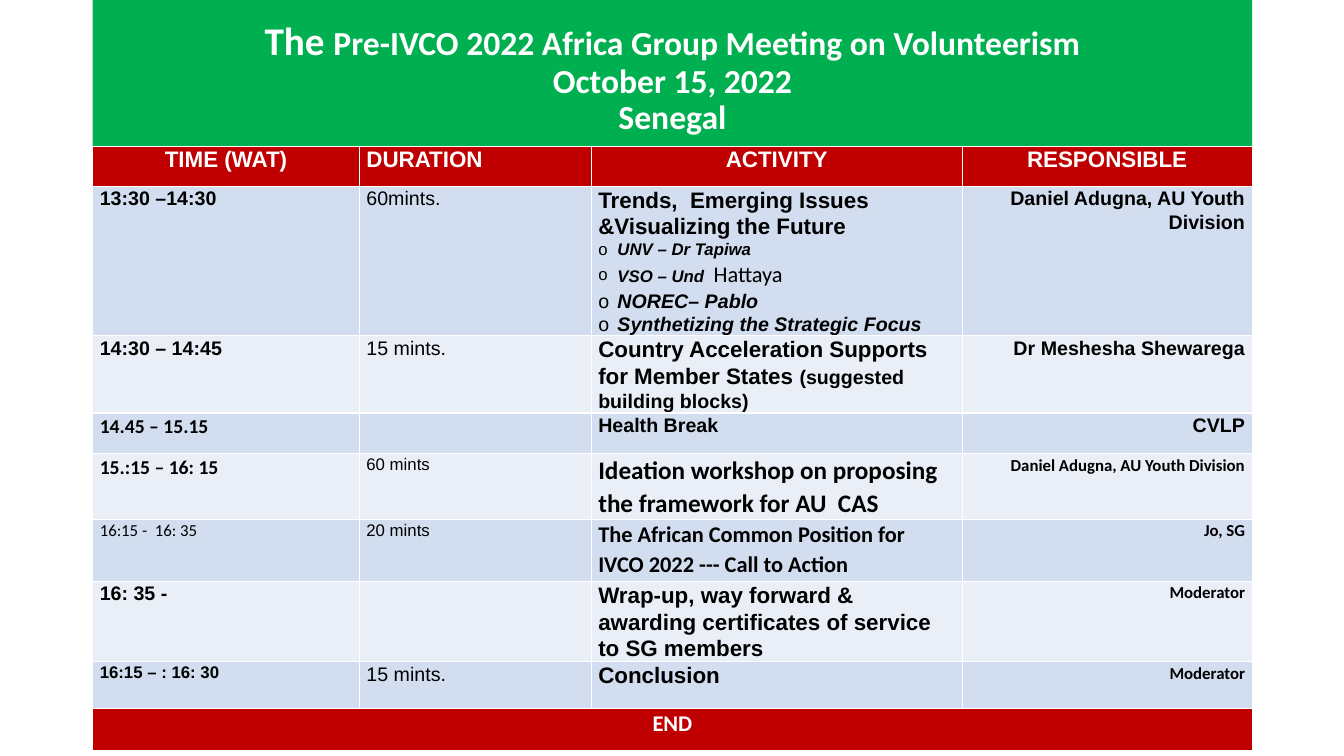
from dataclasses import dataclass

from lxml import etree
from pptx import Presentation, util as u
from pptx.dml.color import RGBColor
from pptx.enum import text
from pptx.oxml.ns import qn

LEFT, CENTER, RIGHT = text.PP_ALIGN.LEFT, text.PP_ALIGN.CENTER, text.PP_ALIGN.RIGHT


@dataclass(frozen=True)
class Theme:
    white: str = "FFFFFF"
    black: str = "000000"
    green: str = "00B050"
    red: str = "C00000"
    bands: tuple = ("D2DEEF", "EAEFF7")
    sans: str = "Arial"
    humanist: str = "Calibri"
    small: int = 12
    body: int = 14
    large: int = 16
    feature: int = 18
    title: int = 24
    lead: int = 28


THEME = Theme()


@dataclass(frozen=True)
class Span:
    words: str
    size: int = THEME.body
    face: str = THEME.sans
    bold: bool = True
    italic: bool = False
    color: str = THEME.black

    def style(self, font):
        font.name, font.size = self.face, u.Pt(self.size)
        font.bold, font.italic = self.bold, self.italic
        font.color.rgb = RGBColor.from_string(self.color)


@dataclass(frozen=True)
class Para:
    spans: tuple
    bullet: bool = False


def line(words, size=THEME.body, face=THEME.sans, **look):
    return Para((Span(words, size, face, **look),))


def item(*spans):
    return Para(spans, bullet=True)


class AgendaPage:
    """Places elements by percentages of the slide's size."""

    def __init__(self, deck, theme):
        self.deck, self.theme = deck, theme
        self.page = deck.slides.add_slide(deck.slide_layouts[5])

    def across(self, share):
        return int(self.deck.slide_width * share / 100)

    def down(self, share):
        return int(self.deck.slide_height * share / 100)

    def area(self, left, top, width, height):
        return self.across(left), self.down(top), self.across(width), self.down(height)

    def title(self, place, lines):
        box = self.page.shapes.title
        box.left, box.top, box.width, box.height = self.area(*place)
        box.fill.solid()
        box.fill.fore_color.rgb = RGBColor.from_string(self.theme.green)
        frame = box.text_frame
        frame.word_wrap, frame.auto_size = True, text.MSO_AUTO_SIZE.NONE
        frame.vertical_anchor = text.MSO_ANCHOR.MIDDLE
        frame.margin_top, frame.margin_bottom = self.down(1.6), 0
        para = frame.paragraphs[0]
        para.alignment, para.line_spacing = CENTER, 0.9
        for number, spans in enumerate(lines):
            if number:
                para.add_line_break()
            self.add_spans(para, spans)

    def add_spans(self, para, spans):
        for span in spans:
            run = para.add_run()
            run.text = span.words
            span.style(run.font)

    def bullet(self, para):
        props = para._p.get_or_add_pPr()
        indent = u.Inches(0.19)
        props.set("marL", str(indent))
        props.set("indent", str(-indent))
        etree.SubElement(props, qn("a:buFont")).set("typeface", self.theme.sans)
        etree.SubElement(props, qn("a:buChar")).set("char", "o")

    def cell(self, cell, paras, fill, alignment):
        cell.fill.solid()
        cell.fill.fore_color.rgb = RGBColor.from_string(fill)
        cell.margin_left = cell.margin_right = u.Inches(0.07)
        cell.margin_top = cell.margin_bottom = 0
        frame = cell.text_frame
        for number, content in enumerate(paras):
            para = frame.add_paragraph() if number else frame.paragraphs[0]
            para.alignment, para.line_spacing = alignment, 1.07
            if content.bullet:
                self.bullet(para)
            if len(content.spans) == 1:
                para.add_run().text = content.spans[0].words
                content.spans[0].style(para.font)
            else:
                self.add_spans(para, content.spans)

    def agenda(self, place, columns, rows, header, sessions, closing):
        """Columns are shares of the table's width, rows shares of the slide's height."""
        table = self.page.shapes.add_table(
            len(rows), len(columns), *self.area(*place)).table
        for column, share in zip(table.columns, columns):
            column.width = self.across(place[2] * share / 100)
        for row, share in zip(table.rows, rows):
            row.height = self.down(share)
        for number, words in enumerate(header):
            self.cell(table.cell(0, number),
                      [line(words, self.theme.large, color=self.theme.white)],
                      self.theme.red, LEFT if words == "DURATION" else CENTER)
        for number, session in enumerate(sessions):
            fill = self.theme.bands[number % 2]
            for column, content in enumerate(session):
                self.cell(table.cell(number + 1, column), content, fill,
                          RIGHT if column == len(columns) - 1 else LEFT)
        last = len(rows) - 1
        table.cell(last, 0).merge(table.cell(last, len(columns) - 1))
        self.cell(table.cell(last, 0), [closing], self.theme.red, CENTER)


def sessions():
    """Each session: time, duration, activity, responsible."""
    t = THEME
    trends = [
        line("Trends,  Emerging Issues &Visualizing the Future", t.large),
        item(Span("UNV – Dr Tapiwa", t.small, italic=True)),
        item(Span("VSO – Und  ", t.small, italic=True),
             Span("Hattaya", t.large, t.humanist, bold=False)),
        item(Span("NOREC– Pablo", italic=True)),
        item(Span("Synthetizing the Strategic Focus", italic=True)),
    ]
    support = Para((Span("Country Acceleration Supports for Member States ", t.large),
                    Span("(suggested building blocks)")))
    moderator = [line("Moderator", t.small, t.humanist)]
    return [
        ([line("13:30 –14:30")], [line("60mints.", bold=False)], trends,
         [line("Daniel Adugna, AU Youth Division")]),
        ([line("14:30 – 14:45")], [line("15 mints.", bold=False)], [support],
         [line("Dr Meshesha Shewarega")]),
        ([line("14.45 – 15.15", face=t.humanist)], [], [line("Health Break")],
         [line("CVLP")]),
        ([line("15.:15 – 16: 15", face=t.humanist)],
         [line("60 mints", t.small, bold=False)],
         [line("Ideation workshop on proposing the framework for AU  CAS",
               t.feature, t.humanist)],
         [line("Daniel Adugna, AU Youth Division", t.small, t.humanist)]),
        ([line("16:15 -  16: 35", t.small, t.humanist, bold=False)],
         [line("20 mints", t.small, bold=False)],
         [line("The African Common Position for IVCO 2022 --- Call to Action",
               t.large, t.humanist)],
         [line("Jo, SG", t.small, t.humanist)]),
        ([line("16: 35 -")], [],
         [line("Wrap-up, way forward & awarding certificates of service to SG members",
               t.large)], moderator),
        ([line("16:15 – : 16: 30", t.small)], [line("15 mints.", bold=False)],
         [line("Conclusion", t.large)], moderator),
    ]


def main():
    deck = Presentation()
    deck.slide_width, deck.slide_height = u.Inches(13.33), u.Inches(7.5)
    page = AgendaPage(deck, THEME)
    left, width, band = 6.9, 86.27, 19.33

    def heading(words, size=THEME.title):
        return Span(words, size, THEME.humanist, color=THEME.white)

    page.title((left, 0, width, band), [
        [heading("The ", THEME.lead),
         heading("Pre-IVCO 2022 Africa Group Meeting on Volunteerism")],
        [heading("October 15, 2022")],
        [heading("Senegal")],
    ])
    rows = (5.3, 19.8, 10.2, 5.4, 8.7, 8.2, 10.6, 6.2, 5.5)
    page.agenda((left, band, width, sum(rows)), (23, 20, 32, 25), rows,
                ("TIME (WAT)", "DURATION", "ACTIVITY", "RESPONSIBLE"), sessions(),
                line("END", THEME.large, THEME.humanist, color=THEME.white))
    deck.save("out.pptx")


if __name__ == "__main__":
    main()
